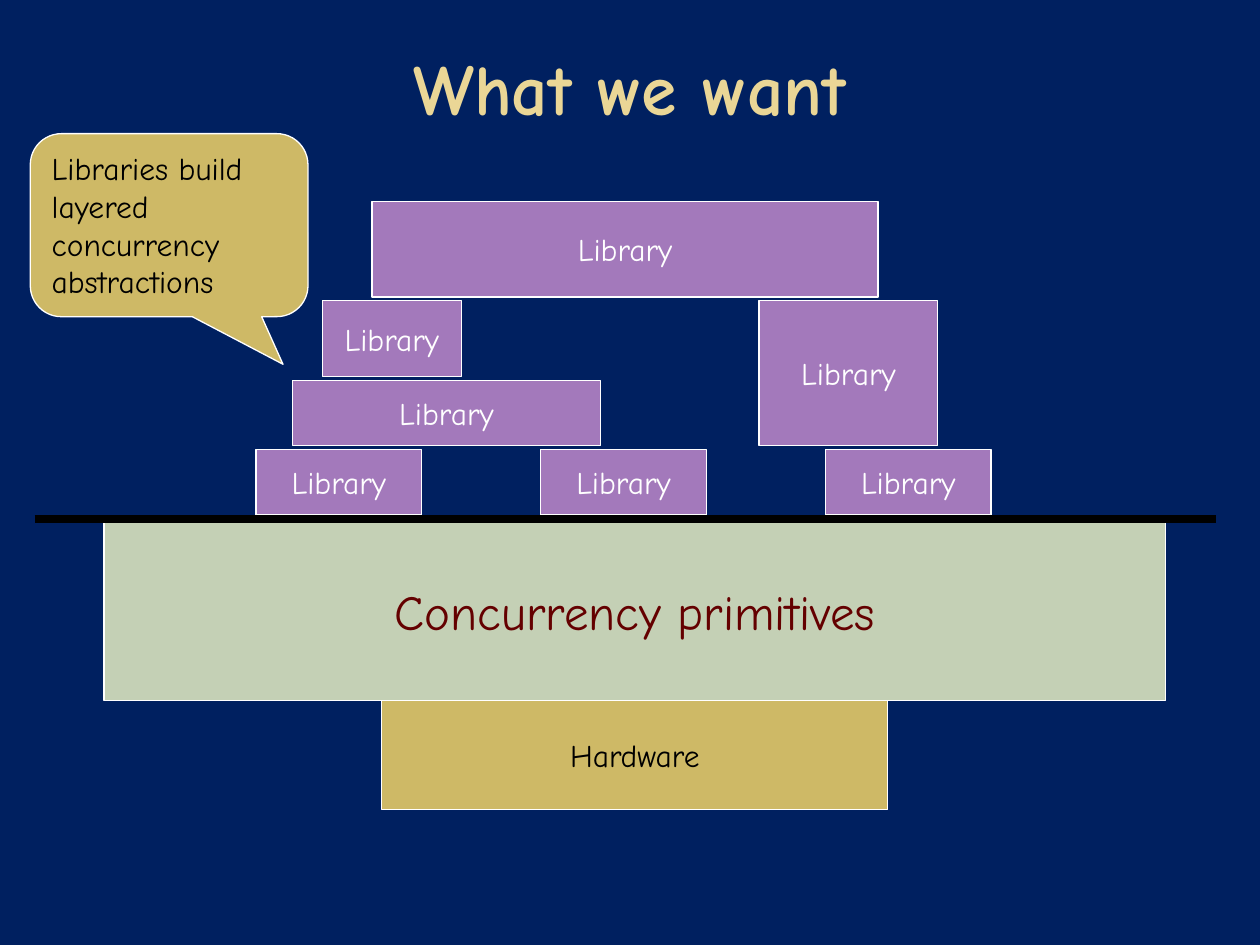
from lxml.etree import SubElement
from pptx import Presentation
from pptx.dml.color import RGBColor
from pptx.enum.shapes import MSO_CONNECTOR as Connector, MSO_SHAPE as Shape
from pptx.enum.text import MSO_ANCHOR as Anchor, PP_ALIGN as Align
from pptx.oxml.ns import qn
from pptx.util import Pt

NAVY, GOLD, SAND = "002060", "EAD696", "CEB966"
SAGE, PURPLE, MAROON = "C4D0B5", "A379BB", "640000"
WHITE, BLACK = "FFFFFF", "000000"


def color(value):
    return RGBColor.from_string(value)


class Diagram:
    """Draws styled elements on one slide."""

    font = "Comic Neue"

    def __init__(self, deck):
        self.page = deck.slides.add_slide(deck.slide_layouts[5])
        self.page.background.fill.solid()
        self.page.background.fill.fore_color.rgb = color(NAVY)

    def label(self, box, text, size, ink, align=Align.CENTER, bold=False):
        box.text_frame.text = text
        para = box.text_frame.paragraphs[0]
        para.alignment = align
        span = para.runs[0]
        span.font.name, span.font.size, span.font.bold = self.font, Pt(size), bold
        span.font.color.rgb = color(ink)

    def title(self, text, left, top, width, height):
        box = self.page.shapes.title
        box.left, box.top, box.width, box.height = map(Pt, (left, top, width, height))
        self.label(box, text, 41, GOLD, bold=True)
        box.text_frame.vertical_anchor = Anchor.TOP

    def shape(self, kind, left, top, width, height, fill):
        box = self.page.shapes.add_shape(kind, *map(Pt, (left, top, width, height)))
        box.shadow.inherit = False
        box.fill.solid()
        box.fill.fore_color.rgb = color(fill)
        box.line.color.rgb = color(WHITE)
        box.line.width = Pt(0.75)
        return box

    def block(self, text, left, top, width, height, fill=PURPLE, ink=WHITE, size=18):
        box = self.shape(Shape.RECTANGLE, left, top, width, height, fill)
        self.label(box, text, size, ink)
        box.text_frame.word_wrap = False
        box.text_frame.vertical_anchor = Anchor.MIDDLE

    def callout(self, text, left, top, width, height, adjustments):
        box = self.shape(Shape.ROUNDED_RECTANGULAR_CALLOUT, left, top, width, height, SAND)
        for index, value in enumerate(adjustments):
            box.adjustments[index] = value
        self.label(box, text, 18, BLACK, Align.LEFT)
        box.text_frame.word_wrap = True
        box.text_frame.vertical_anchor = Anchor.TOP

    def divider(self, left, right, top):
        line = self.page.shapes.add_connector(
            Connector.STRAIGHT, Pt(left), Pt(top), Pt(right), Pt(top))
        line.line.color.rgb = color(BLACK)
        line.line.width = Pt(4.5)
        SubElement(line._element.spPr, qn("a:effectLst"))


def main():
    deck = Presentation()
    deck.slide_width, deck.slide_height = Pt(720), Pt(540)
    diagram = Diagram(deck)
    diagram.title("What we want", 36, 21.6, 648, 90)
    diagram.block("Hardware", 218.2, 400.3, 289.2, 62.4, SAND, BLACK)
    diagram.block("Concurrency primitives", 59.5, 298.1, 606.7, 102.2, SAGE, MAROON, 28)

    base_row = [(146.3 + 162.7 * column, 256.8, 94.6, 37.6) for column in range(3)]
    upper_rows = [
        (167.2, 217.3, 175.9, 37.4),
        (184.2, 171.8, 79.4, 43.4),
        (433.7, 171.8, 102.2, 82.9),
        (212.6, 115.2, 289.2, 54.5),
    ]
    for bounds in base_row + upper_rows:
        diagram.block("Library", *bounds)

    diagram.divider(19.8, 694.6, 296.7)
    diagram.callout("Libraries build layered concurrency abstractions",
                    17.3, 76.4, 158.7, 104.6, (0.41, 0.76, 0.17))
    deck.save("out.pptx")


if __name__ == "__main__":
    main()
